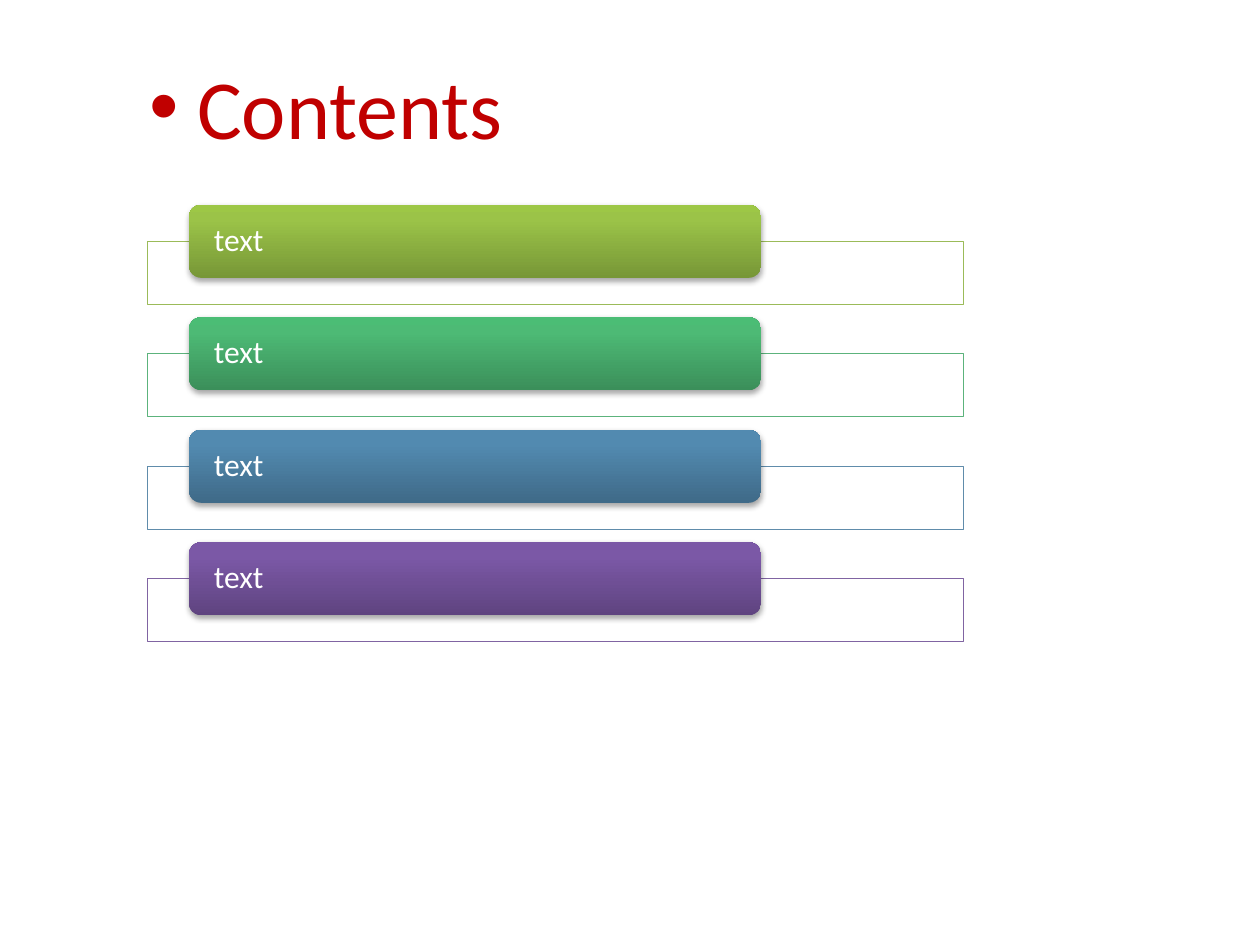
from pptx import Presentation
from pptx.dml.color import RGBColor
from pptx.enum.shapes import MSO_SHAPE
from pptx.enum.text import MSO_ANCHOR, PP_ALIGN
from pptx.oxml import parse_xml
from pptx.oxml.ns import nsdecls
from pptx.util import Inches, Pt

RECT = MSO_SHAPE.RECTANGLE
ROUND = MSO_SHAPE.ROUNDED_RECTANGLE
MID = MSO_ANCHOR.MIDDLE
LEFT = PP_ALIGN.LEFT

COLORS = {
    "title": "C00000",
    "text": "FFFFFF",
    "frame": "FFFFFF",
    "shadow": "000000",
    "green": ("9BBB59", "779737", "9BC348", "9DC746"),
    "mint": ("5CB37C", "3B8F5A", "4DBA75", "4BBD75"),
    "blue": ("608CAB", "3F6A88", "528AB0", "518BB3"),
    "plum": ("8064A2", "5F4480", "7B58A6", "7C57A8"),
}
ROWS = [("green", "text"), ("mint", "text"), ("blue", "text"), ("plum", "text")]
STOPS = (0, 80, 100)
WIDE, HIGH = 10, 7.5
TOP, PITCH, DROP = 13 / 8, HIGH / 8.4, 0.29


def add_box(kind, left, top, width, height):
    box = slide.shapes.add_shape(
        kind, Inches(left), Inches(top), Inches(width), Inches(height))
    box.shadow.inherit = False
    return box


def add_run(para, text, size, color):
    run = para.add_run()
    run.text = text
    run.font.name = "Calibri"
    run.font.size = Pt(size)
    run.font.color.rgb = RGBColor.from_string(color)


prs = Presentation()
prs.slide_width, prs.slide_height = Inches(WIDE), Inches(HIGH)
slide = prs.slides.add_slide(prs.slide_layouts[1])
title = slide.shapes.title
title.element.getparent().remove(title.element)

for row, (name, label) in enumerate(ROWS):
    edge, *shades = COLORS[name]
    top = TOP + row * PITCH

    frame = add_box(RECT, 1.17, top + DROP, 6.48, 0.5)
    frame.fill.solid()
    frame.fill.fore_color.rgb = RGBColor.from_string(COLORS["frame"])
    frame.element.spPr.find("./{*}solidFill/{*}srgbClr").append(
        parse_xml(f'<a:alpha {nsdecls("a")} val="90000"/>'))
    frame.line.color.rgb = RGBColor.from_string(edge)
    frame.line.width = Pt(0.75)

    card = add_box(ROUND, 1.5, top, 4.54, 0.58)
    card.line.fill.background()
    stops = "".join(
        f'<a:gs pos="{pos * 1000}"><a:srgbClr val="{shade}"/></a:gs>'
        for pos, shade in zip(STOPS, shades))
    props = card.element.spPr
    props.find("./{*}prstGeom").addnext(parse_xml(
        f'<a:gradFill {nsdecls("a")} rotWithShape="1"><a:gsLst>{stops}</a:gsLst>'
        '<a:lin ang="16200000" scaled="0"/></a:gradFill>'))
    props.find("./{*}effectLst").append(parse_xml(
        f'<a:outerShdw {nsdecls("a")} blurRad="{Pt(3.1)}" dist="{Pt(1.8)}" '
        f'dir="5400000" rotWithShape="0"><a:srgbClr val="{COLORS["shadow"]}">'
        '<a:alpha val="35000"/></a:srgbClr></a:outerShdw>'))

    body = card.text_frame
    body.word_wrap = True
    body.vertical_anchor = MID
    body.margin_left = body.margin_right = Inches(0.17)
    body.margin_top = body.margin_bottom = 0
    para = body.paragraphs[0]
    para.alignment = LEFT
    para.line_spacing = 0.9
    para.runs or add_run(para, label, 18, COLORS["text"])

head = slide.placeholders[1]
head.left, head.top = Inches(1.09), Inches(0.39)
head.width, head.height = Inches(3.75), Inches(1.02)
add_run(head.text_frame.paragraphs[0], "Contents", 48, COLORS["title"])
slide.shapes.element.append(head.element)

prs.save("out.pptx")
